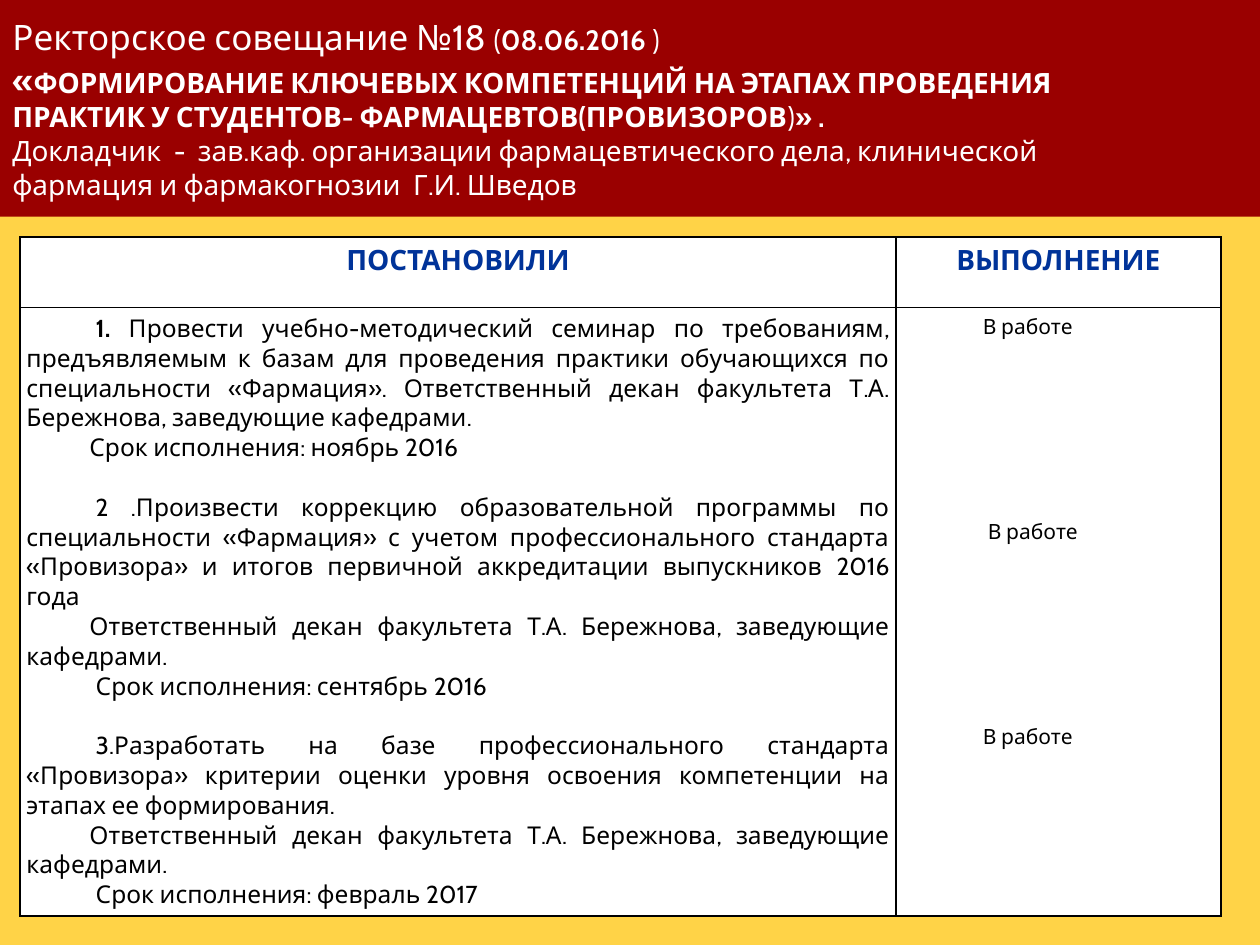
from lxml import etree
from pptx import Presentation
from pptx.dml.color import RGBColor
from pptx.enum.shapes import MSO_SHAPE
from pptx.enum.text import MSO_ANCHOR, PP_ALIGN
from pptx.oxml.ns import qn
from pptx.util import Inches, Pt

RECT = MSO_SHAPE.RECTANGLE
MIDDLE = MSO_ANCHOR.MIDDLE
LEFT, CENTER, JUSTIFY = PP_ALIGN.LEFT, PP_ALIGN.CENTER, PP_ALIGN.JUSTIFY

COLS, ROWS = 100, 75  # layout grid of the slide
GOLD, RED, BLUE, WHITE, BLACK = "FFD347", "9A0000", "003399", "FFFFFF", "000000"


def color(value):
    return RGBColor.from_string(value)


class Deck:
    font = "Cabin"

    def __init__(self, width, height):
        self.prs = Presentation()
        self.prs.slide_width, self.prs.slide_height = Inches(width), Inches(height)
        self.s = None

    def x(self, cols):
        return int(self.prs.slide_width * cols / COLS)

    def y(self, rows):
        return int(self.prs.slide_height * rows / ROWS)

    def slide(self, background):
        self.s = self.prs.slides.add_slide(self.prs.slide_layouts[6])
        fill = self.s.background.fill
        fill.solid()
        fill.fore_color.rgb = color(background)

    def run(self, p, text, size, hue, bold=False):
        r = p.add_run()
        r.text = text
        r.font.name, r.font.size, r.font.bold = self.font, Pt(size), bold
        r.font.color.rgb = color(hue)

    def banner(self, height, fill, lines):
        """Full-width band; each line is a list of (text, size, bold)."""
        sp = self.s.shapes.add_shape(RECT, 0, 0, self.x(COLS), self.y(height))
        sp.shadow.inherit = False
        sp.fill.solid()
        sp.fill.fore_color.rgb = color(fill)
        sp.line.fill.background()
        tf = sp.text_frame
        tf.word_wrap, tf.vertical_anchor = True, MIDDLE
        p = tf.paragraphs[0]
        p.alignment = LEFT
        for i, line in enumerate(lines):
            if i:
                p.add_line_break()
            for text, size, bold in line:
                self.run(p, text, size, WHITE, bold)

    def table(self, left, top, widths, heights):
        frame = self.s.shapes.add_table(
            len(heights), len(widths), self.x(left), self.y(top),
            self.x(sum(widths)), self.y(sum(heights)))
        table = frame.table
        table.first_row = table.horz_banding = False
        for column, width in zip(table.columns, widths):
            column.width = self.x(width)
        for row, height in zip(table.rows, heights):
            row.height = self.y(height)
        return table

    def cell(self, cell, paragraphs, size, hue=BLACK, align=LEFT):
        """Each paragraph is (runs, first-line indent in inches, space before)."""
        cell.margin_left = cell.margin_right = Inches(0.05)
        cell.margin_top = cell.margin_bottom = Inches(0.05)
        self.borders(cell)
        cell.fill.solid()
        cell.fill.fore_color.rgb = color(WHITE)
        tf = cell.text_frame
        for i, (runs, indent, before) in enumerate(paragraphs):
            p = tf.add_paragraph() if i else tf.paragraphs[0]
            p.alignment, p.space_before = align, Pt(before)
            pPr = p._p.get_or_add_pPr()
            pPr.set("marL", "0")
            pPr.set("indent", str(Inches(indent)))
            for text, bold in runs:
                self.run(p, text, size, hue, bold)

    def borders(self, cell):
        tcPr = cell._tc.get_or_add_tcPr()
        for side in ("a:lnL", "a:lnR", "a:lnT", "a:lnB"):
            ln = etree.SubElement(tcPr, qn(side), w=str(Pt(1)))
            fill = etree.SubElement(ln, qn("a:solidFill"))
            etree.SubElement(fill, qn("a:srgbClr"), val=BLACK)


def main():
    deck = Deck(10, 7.5)
    deck.slide(GOLD)

    # Decisions and their status
    table = deck.table(1.6, 18.8, widths=(69.5, 25.8), heights=(5.6, 48.2))
    for i, heading in enumerate(("ПОСТАНОВИЛИ", "ВЫПОЛНЕНИЕ")):
        deck.cell(table.cell(0, i), [([(heading, True)], 0, 0)], 16, BLUE, CENTER)

    gap = 17  # one line between decisions
    owner = "Ответственный декан факультета Т.А. Бережнова, заведующие кафедрами."
    decisions = [
        ([("1. ", True),
          ("Провести учебно-методический семинар по требованиям, предъявляемым "
           "к базам для проведения практики обучающихся по специальности «Фармация». "
           "Ответственный декан факультета Т.А. Бережнова, заведующие кафедрами.",
           False)], 0.55, 0),
        ([("Срок исполнения: ноябрь 2016", False)], 0.5, 0),
        ([("2 .Произвести коррекцию образовательной программы по специальности "
           "«Фармация» с учетом профессионального стандарта «Провизора» и итогов "
           "первичной аккредитации выпускников 2016 года", False)], 0.55, gap),
        ([(owner, False)], 0.5, 0),
        ([("Срок исполнения: сентябрь 2016", False)], 0.55, 0),
        ([("3.Разработать на базе профессионального стандарта «Провизора» критерии "
           "оценки уровня освоения компетенции на этапах ее формирования.", False)],
         0.55, gap),
        ([(owner, False)], 0.5, 0),
        ([("Срок исполнения: февраль 2017", False)], 0.55, 0),
    ]
    deck.cell(table.cell(1, 0), decisions, 14, align=JUSTIFY)

    status = [([("В работе", False)], indent, before)
              for indent, before in ((0.64, 0), (0.68, 102.5), (0.64, 102.5))]
    deck.cell(table.cell(1, 1), status, 12)

    # Title band
    deck.banner(17.2, RED, [
        [("Ректорское совещание №18 ", 20, False), ("(", 16, False),
         ("08.06.2016 ", 16, True), (")", 16, False)],
        [("«", 20, True),
         ("ФОРМИРОВАНИЕ КЛЮЧЕВЫХ КОМПЕТЕНЦИЙ НА ЭТАПАХ ПРОВЕДЕНИЯ", 16, True)],
        [("ПРАКТИК У СТУДЕНТОВ- ФАРМАЦЕВТОВ(ПРОВИЗОРОВ", 16, True),
         (")", 16, False), ("» .", 16, True)],
        [("Докладчик  -  зав.каф. организации фармацевтического дела, клинической",
          16, False)],
        [("фармация и фармакогнозии  Г.И. Шведов", 16, False)],
    ])

    deck.prs.save("out.pptx")


if __name__ == "__main__":
    main()
